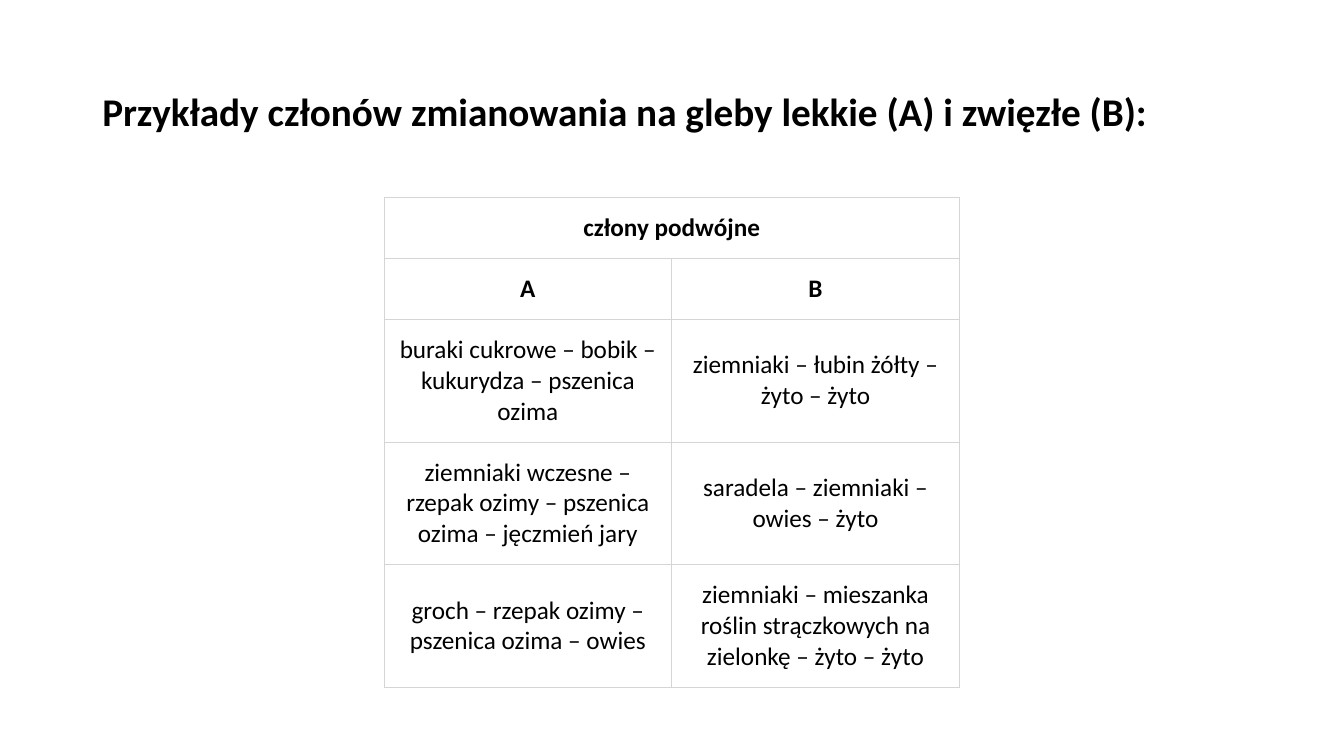
from lxml import etree
from pptx import Presentation
from pptx.dml.color import RGBColor
from pptx.enum import text
from pptx.oxml import ns
from pptx.util import Pt

BLACK = RGBColor(0x00, 0x00, 0x00)
WHITE = RGBColor(0xFF, 0xFF, 0xFF)
GREY = RGBColor(0xD5, 0xD5, 0xD5)

TITLE = "Przykłady członów zmianowania na gleby lekkie (A) i zwięzłe (B):"
ROWS = [
    ("człony podwójne", ""),
    ("A", "B"),
    ("buraki cukrowe – bobik – kukurydza – pszenica ozima",
     "ziemniaki – łubin żółty – żyto – żyto"),
    ("ziemniaki wczesne – rzepak ozimy – pszenica ozima – jęczmień jary",
     "saradela – ziemniaki – owies – żyto"),
    ("groch – rzepak ozimy – pszenica ozima – owies",
     "ziemniaki – mieszanka roślin strączkowych na zielonkę – żyto – żyto"),
]
HEADER_ROWS = 2
HEADER_HEIGHT = Pt(43.2)
BODY_HEIGHT = Pt(85.7)
COLUMN_WIDTH = Pt(205.5)
CELL_MARGIN = Pt(10.8)


def write_text(tf, content, size=18, bold=False, align=text.PP_ALIGN.LEFT, spacing=None):
    tf.word_wrap = True
    p = tf.paragraphs[0]
    p.alignment = align
    p.line_spacing = spacing
    r = p.add_run()
    r.text = content
    r.font.name = "Calibri"
    r.font.size = Pt(size)
    r.font.bold = bold
    r.font.color.rgb = BLACK


def add_title(s, content):
    sp = s.shapes.add_textbox(Pt(66), Pt(28.75), Pt(828), Pt(104.4))
    tf = sp.text_frame
    write_text(tf, content, size=28, bold=True, spacing=0.9)
    tf.auto_size = text.MSO_AUTO_SIZE.NONE
    tf.vertical_anchor = text.MSO_ANCHOR.MIDDLE


def add_borders(cell, color, width):
    tc_pr = cell._tc.get_or_add_tcPr()
    for side in ("a:lnL", "a:lnR", "a:lnT", "a:lnB"):
        ln = etree.SubElement(tc_pr, ns.qn(side), w=str(width))
        fill = etree.SubElement(ln, ns.qn("a:solidFill"))
        etree.SubElement(fill, ns.qn("a:srgbClr"), val=str(color))


def format_cell(cell):
    cell.margin_left = cell.margin_right = CELL_MARGIN
    cell.margin_top = cell.margin_bottom = CELL_MARGIN
    cell.vertical_anchor = text.MSO_ANCHOR.MIDDLE
    add_borders(cell, GREY, Pt(0.75))
    cell.fill.solid()
    cell.fill.fore_color.rgb = WHITE


def add_rotation_table(s, rows):
    heights = [HEADER_HEIGHT if i < HEADER_ROWS else BODY_HEIGHT for i in range(len(rows))]
    frame = s.shapes.add_table(len(rows), 2, Pt(274.3), Pt(141), 2 * COLUMN_WIDTH, sum(heights))
    table = frame.table
    table.first_row = table.horz_banding = False
    for i, row in enumerate(rows):
        table.rows[i].height = heights[i]
        for j, content in enumerate(row):
            cell = table.cell(i, j)
            format_cell(cell)
            if content:
                write_text(cell.text_frame, content, bold=i < HEADER_ROWS,
                           align=text.PP_ALIGN.CENTER)
    table.cell(0, 0).merge(table.cell(0, 1))


def main():
    prs = Presentation()
    prs.slide_width, prs.slide_height = Pt(960), Pt(540)
    s = prs.slides.add_slide(prs.slide_layouts[6])
    add_title(s, TITLE)
    add_rotation_table(s, ROWS)
    prs.save("out.pptx")


if __name__ == "__main__":
    main()
